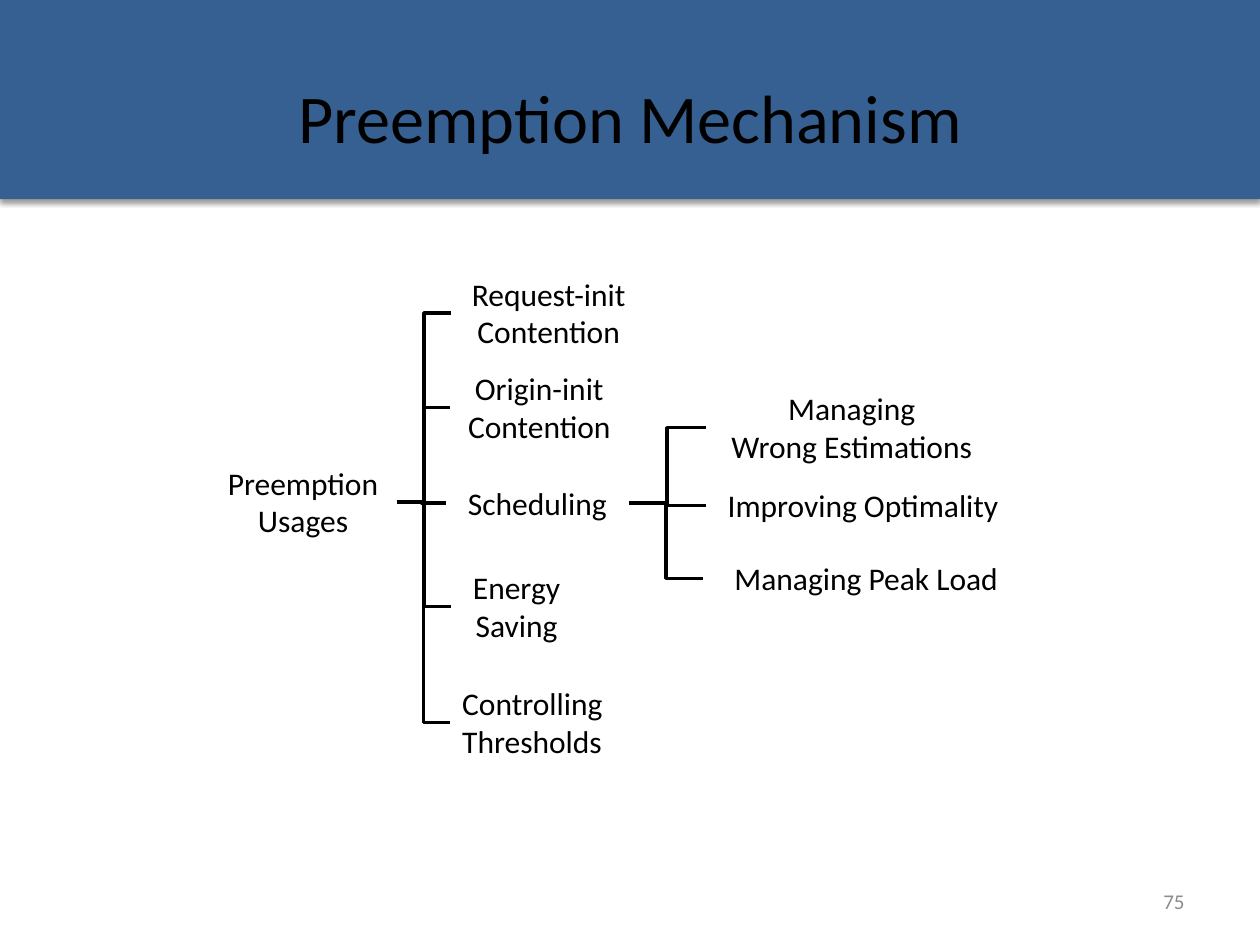
from lxml.etree import SubElement
from pptx import Presentation
from pptx.dml.color import RGBColor
from pptx.enum.shapes import MSO_CONNECTOR, MSO_SHAPE
from pptx.enum.text import MSO_ANCHOR, MSO_AUTO_SIZE, PP_ALIGN
from pptx.oxml.ns import qn
from pptx.util import Inches, Pt

BLUE = RGBColor(0x37, 0x60, 0x92)
BLACK = RGBColor(0, 0, 0)
GRAY = RGBColor(0x8C, 0x8C, 0x8C)
FONT = "Calibri"
LEFT_SIDE, RIGHT_SIDE = 1, 3  # connection sites of a rectangle
LINE_HEIGHTS = {1: 0.4, 2: 0.71}

TITLE = "Preemption Mechanism"
PAGE_NUMBER = "75"

# name: (lines, left, top, width, alignment)
NODES = {
    "usages": (["Preemption", "Usages"], 1.66, 3.63, 1.49, PP_ALIGN.CENTER),
    "request": (["Request-init", "Contention"], 3.58, 2.13, 1.55, PP_ALIGN.CENTER),
    "origin": (["Origin-init", "Contention"], 3.57, 2.88, 1.42, PP_ALIGN.CENTER),
    "scheduling": (["Scheduling"], 3.54, 3.79, 1.45, PP_ALIGN.CENTER),
    "energy": (["Energy", "Saving"], 3.58, 4.46, 1.04, PP_ALIGN.CENTER),
    "thresholds": (["Controlling", "Thresholds"], 3.57, 5.38, 1.45, PP_ALIGN.LEFT),
    "estimations": (["Managing", "Wrong Estimations"], 5.6, 3.04, 2.32, PP_ALIGN.CENTER),
    "optimality": (["Improving Optimality"], 5.6, 3.81, 2.5, PP_ALIGN.CENTER),
    "peak": (["Managing Peak Load"], 5.58, 4.39, 2.59, PP_ALIGN.CENTER),
}
BRANCHES = {
    "usages": ["request", "origin", "scheduling", "energy", "thresholds"],
    "scheduling": ["estimations", "optimality", "peak"],
}


def write(frame, lines, size, color, alignment):
    frame.text = "\n".join(lines)
    for paragraph in frame.paragraphs:
        paragraph.alignment = alignment
        paragraph.font.name = FONT
        paragraph.font.size = Pt(size)
        paragraph.font.color.rgb = color


def add_banner(slide):
    banner = slide.shapes.add_shape(MSO_SHAPE.RECTANGLE, 0, 0, Inches(10), Inches(1.58))
    banner.fill.solid()
    banner.fill.fore_color.rgb = BLUE
    banner.line.fill.background()
    banner.shadow.inherit = False
    effects = banner.element.spPr.find(qn("a:effectLst"))
    shadow = SubElement(effects, qn("a:outerShdw"), blurRad=str(Pt(3.1)),
                        dist=str(Pt(1.6)), dir="5400000", rotWithShape="0")
    color = SubElement(shadow, qn("a:srgbClr"), val="000000")
    SubElement(color, qn("a:alpha"), val="38000")


def add_title(slide):
    title = slide.shapes.title
    title.left, title.top = Inches(0.5), Inches(0.3)
    title.width, title.height = Inches(9), Inches(1.25)
    title.text_frame.vertical_anchor = MSO_ANCHOR.MIDDLE
    write(title.text_frame, [TITLE], 39, BLACK, PP_ALIGN.CENTER)
    slide.shapes.element.append(title.element)  # in front of the banner


def add_node(slide, lines, left, top, width, alignment):
    height = LINE_HEIGHTS[len(lines)]
    box = slide.shapes.add_textbox(Inches(left), Inches(top), Inches(width), Inches(height))
    box.text_frame.word_wrap = False
    box.text_frame.auto_size = MSO_AUTO_SIZE.SHAPE_TO_FIT_TEXT
    write(box.text_frame, lines, 18, BLACK, alignment)
    return box


def connect(slide, parent, child):
    line = slide.shapes.add_connector(MSO_CONNECTOR.ELBOW, 0, 0, 0, 0)
    line.begin_connect(parent, RIGHT_SIDE)
    line.end_connect(child, LEFT_SIDE)
    line.line.color.rgb = BLACK
    line.line.width = Pt(2)
    SubElement(line.element.spPr, qn("a:effectLst"))


def add_page_number(slide):
    box = slide.shapes.add_textbox(Inches(7.17), Inches(6.95), Inches(2.33), Inches(0.4))
    box.text_frame.word_wrap = True
    box.text_frame.vertical_anchor = MSO_ANCHOR.MIDDLE
    write(box.text_frame, [PAGE_NUMBER], 12, GRAY, PP_ALIGN.RIGHT)


def main():
    deck = Presentation()
    deck.slide_width, deck.slide_height = Inches(10), Inches(7.5)
    slide = deck.slides.add_slide(deck.slide_layouts[5])
    add_banner(slide)
    add_title(slide)
    boxes = {name: add_node(slide, *node) for name, node in NODES.items()}
    for parent, children in BRANCHES.items():
        for child in children:
            connect(slide, boxes[parent], boxes[child])
    add_page_number(slide)
    deck.save("out.pptx")


if __name__ == "__main__":
    main()
